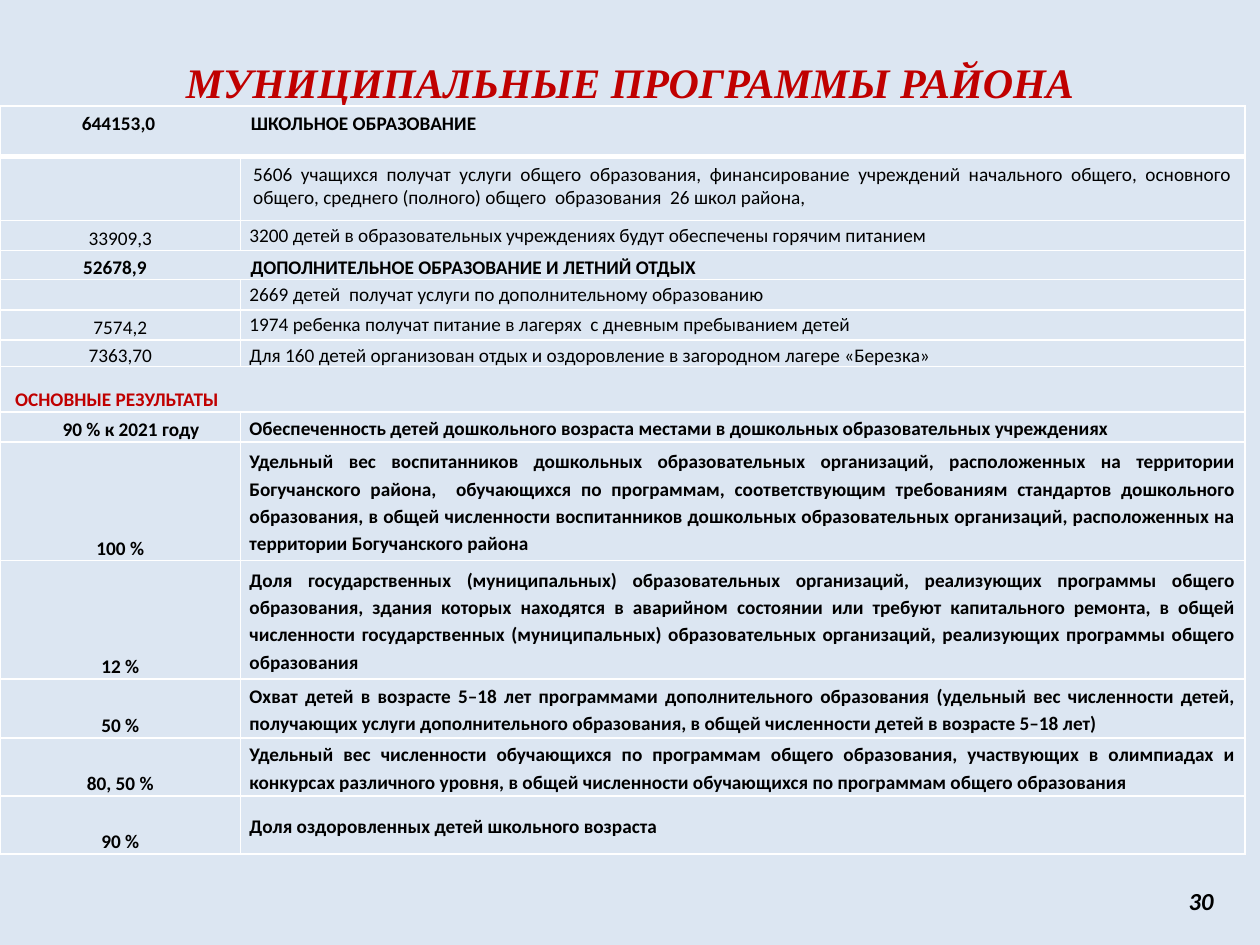
from lxml.etree import SubElement
from pptx import Presentation
from pptx.dml.color import RGBColor
from pptx.enum.text import MSO_ANCHOR as Anchor, PP_ALIGN as Align
from pptx.oxml.ns import qn
from pptx.util import Inches, Pt

COLORS = {"background": "DCE6F2", "red": "C00000", "text": "000000", "border": "FFFFFF"}
GRID_COLUMNS, GRID_ROWS = 1000, 750
WIDE = (10, 5, 10, 5)  # cell insets in grid units: left, top, right, bottom
TIGHT = (7, 0, 7, 0)


class ProgramSlide:
    """Holds the style and the current slide; lengths are grid columns and rows."""

    font, size = "Calibri", 11

    def __init__(self, presentation):
        self.column = presentation.slide_width / GRID_COLUMNS
        self.row = presentation.slide_height / GRID_ROWS
        self.slide = presentation.slides.add_slide(presentation.slide_layouts[6])
        fill = self.slide.background.fill
        fill.solid()
        fill.fore_color.rgb = RGBColor.from_string(COLORS["background"])

    def across(self, columns):
        return round(columns * self.column)

    def down(self, rows):
        return round(rows * self.row)

    def add_text(self, paragraph, text, align, size=None, font=None, color="text",
                 bold=False, italic=False):
        paragraph.alignment = align
        run = paragraph.add_run()
        run.text = text
        run.font.name = font or self.font
        run.font.size = Pt(size or self.size)
        run.font.bold, run.font.italic = bold, italic
        run.font.color.rgb = RGBColor.from_string(COLORS[color])

    def text_box(self, left, top, width, height, text, align, bottom_inset=5, **style):
        shape = self.slide.shapes.add_textbox(
            self.across(left), self.down(top), self.across(width), self.down(height))
        frame = shape.text_frame
        frame.word_wrap = True
        frame.vertical_anchor = Anchor.MIDDLE
        frame.margin_bottom = self.down(bottom_inset)
        self.add_text(frame.paragraphs[0], text, align, **style)

    def table(self, left, top, widths, heights):
        shape = self.slide.shapes.add_table(
            len(heights), len(widths), self.across(left), self.down(top),
            self.across(sum(widths)), self.down(sum(heights)))
        table = shape.table
        table.first_row = table.horz_banding = False
        for column, width in zip(table.columns, widths):
            column.width = self.across(width)
        for row, height in zip(table.rows, heights):
            row.height = self.down(height)
        return table

    def borders(self, cell, bottom):
        properties = cell._tc.get_or_add_tcPr()
        for side, width in (("L", 1), ("R", 1), ("T", 1), ("B", bottom)):
            line = SubElement(properties, qn(f"a:ln{side}"), w=str(int(Pt(width))))
            solid = SubElement(line, qn("a:solidFill"))
            SubElement(solid, qn("a:srgbClr"), val=COLORS["border"])
        cell.fill.background()

    def cell(self, cell, text, align, anchor=Anchor.TOP, insets=TIGHT, spacing=1.15,
             tabs=(), bottom=1, **style):
        self.borders(cell, bottom)
        left, top, right, low = insets
        cell.margin_left, cell.margin_right = self.across(left), self.across(right)
        cell.margin_top, cell.margin_bottom = self.down(top), self.down(low)
        cell.vertical_anchor = anchor
        paragraph = cell.text_frame.paragraphs[0]
        if not text:  # keeps an empty cell from stretching its row
            SubElement(paragraph._p, qn("a:endParaRPr"), sz=str(self.size * 100))
            return
        paragraph.line_spacing = spacing
        if tabs:
            stops = SubElement(paragraph._p.get_or_add_pPr(), qn("a:tabLst"))
            for stop in tabs:
                SubElement(stops, qn("a:tab"), pos=str(self.across(stop)), algn="l")
        self.add_text(paragraph, text, align, **style)

    def band(self, table, row, text, **style):
        first, second = table.cell(row, 0), table.cell(row, 1)
        first.merge(second)
        self.borders(second, style.get("bottom", 1))
        self.cell(first, text, Align.LEFT, bold=True, **style)


# Rows that span the table: row number, text, style
BANDS = [
    (0, "\t644153,0\tШКОЛЬНОЕ ОБРАЗОВАНИЕ",
     dict(insets=WIDE, spacing=1.0, tabs=(55, 189), bottom=3)),
    (3, "\t52678,9\tДОПОЛНИТЕЛЬНОЕ ОБРАЗОВАНИЕ И ЛЕТНИЙ ОТДЫХ",
     dict(anchor=Anchor.BOTTOM, spacing=1.0, tabs=(59, 192))),
    (7, "ОСНОВНЫЕ РЕЗУЛЬТАТЫ",
     dict(anchor=Anchor.BOTTOM, insets=(12, 0, 7, 0), color="red")),
]
# Spending rows: row number, amount, service
SERVICES = [
    (1, "", "5606 учащихся получат услуги общего образования, финансирование учреждений "
     "начального общего, основного общего, среднего (полного) общего  образования  "
     "26 школ района, "),
    (2, "33909,3", "3200 детей в образовательных учреждениях будут обеспечены горячим питанием"),
    (4, "", "2669 детей  получат услуги по дополнительному образованию"),
    (5, "7574,2", "1974 ребенка получат питание в лагерях  с дневным пребыванием детей"),
    (6, "7363,70", "Для 160 детей организован отдых и оздоровление в загородном лагере «Березка»"),
]
# Result rows, from row 8 down: share, indicator
RESULTS = [
    ("90 % к 2021 году", "Обеспеченность детей дошкольного возраста местами в дошкольных "
     "образовательных учреждениях "),
    ("100 %", "Удельный вес воспитанников дошкольных образовательных организаций, "
     "расположенных на территории Богучанского района,  обучающихся по программам, "
     "соответствующим требованиям стандартов дошкольного образования, в общей численности "
     "воспитанников дошкольных образовательных организаций, расположенных на территории "
     "Богучанского района"),
    ("12 %", "Доля государственных (муниципальных) образовательных организаций, реализующих "
     "программы общего образования, здания которых находятся в аварийном состоянии или "
     "требуют капитального ремонта, в общей численности государственных (муниципальных) "
     "образовательных организаций, реализующих программы общего образования "),
    ("50 %", "Охват детей в возрасте 5–18 лет программами дополнительного образования "
     "(удельный вес численности детей, получающих услуги дополнительного образования, "
     "в общей численности детей в возрасте 5–18 лет)"),
    ("80, 50 %", "Удельный вес численности обучающихся по программам общего образования, "
     "участвующих в олимпиадах и конкурсах различного уровня, в общей численности "
     "обучающихся по программам общего образования"),
    ("90 %", "Доля оздоровленных детей школьного возраста"),
]
HEIGHTS = [40, 51, 24, 23, 24, 24, 20, 36, 24, 94, 94, 47, 46, 46]


def main():
    presentation = Presentation()
    presentation.slide_width, presentation.slide_height = Inches(10), Inches(7.5)
    page = ProgramSlide(presentation)

    # Title and page number
    page.text_box(0, 26, 1000, 94, "МУНИЦИПАЛЬНЫЕ ПРОГРАММЫ РАЙОНА", Align.CENTER,
                  bottom_inset=21, size=24, font="Times New Roman", color="red",
                  bold=True, italic=True)
    page.text_box(717, 695, 256, 40, "30", Align.RIGHT, size=14, bold=True, italic=True)

    # Programme table
    table = page.table(0, 84, (191, 797), HEIGHTS)
    for row, text, style in BANDS:
        page.band(table, row, text, **style)
    for row, amount, service in SERVICES:
        layout = dict(insets=WIDE, spacing=1.0) if row == 1 else {}
        page.cell(table.cell(row, 0), amount, Align.CENTER, Anchor.BOTTOM)
        page.cell(table.cell(row, 1), service, Align.JUSTIFY, **layout)
    for row, (share, indicator) in enumerate(RESULTS, start=8):
        insets = (24, 0, 7, 0) if row == 8 else TIGHT
        page.cell(table.cell(row, 0), share, Align.CENTER, Anchor.BOTTOM, insets, bold=True)
        page.cell(table.cell(row, 1), indicator, Align.JUSTIFY, Anchor.MIDDLE, bold=True)

    presentation.save("out.pptx")


if __name__ == "__main__":
    main()
